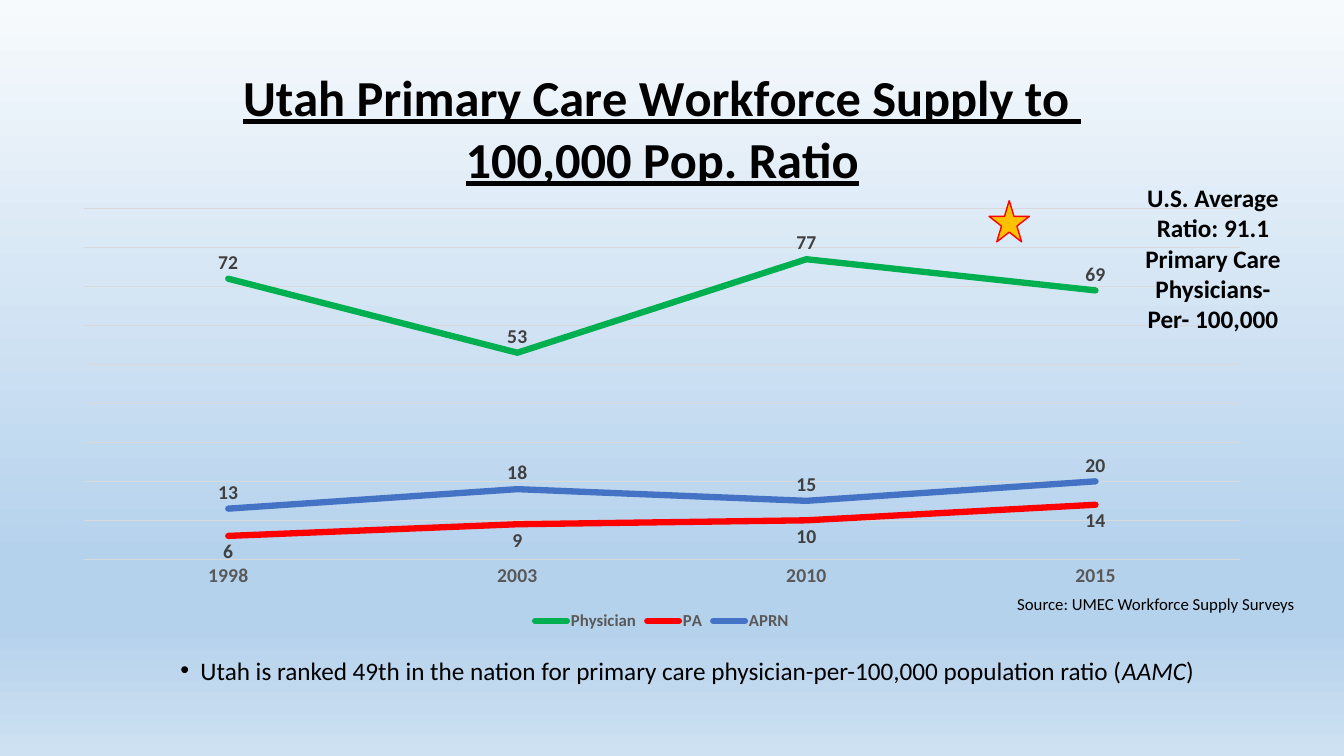
from pptx import Presentation
from pptx.chart.data import CategoryChartData
from pptx.dml.color import RGBColor
from pptx.enum.chart import (XL_CHART_TYPE, XL_LABEL_POSITION as LabelPos,
                             XL_LEGEND_POSITION as LegendPos, XL_MARKER_STYLE as Marker,
                             XL_TICK_MARK as Tick)
from pptx.enum.shapes import MSO_SHAPE
from pptx.enum.text import PP_ALIGN
from pptx.oxml import parse_xml
from pptx.oxml.ns import nsdecls, qn
from pptx.util import Inches, Pt

# Content
TITLE = ["Utah Primary Care Workforce Supply to ", "100,000 Pop. Ratio"]
YEARS = ["1998", "2003", "2010", "2015"]
SERIES = [  # name, values, theme colour, label position
    ("Physician", (72, 53, 77, 69), "physician", LabelPos.ABOVE),
    ("PA", (6, 9, 10, 14), "pa", LabelPos.BELOW),
    ("APRN", (13, 18, 15, 20), "aprn", LabelPos.ABOVE),
]
AVERAGE = [("U.S. Average Ratio: 91.1 Primary Care Physicians-Per- 100,000", False)]
RANKING = [
    ("Utah is ranked 49th in the nation for primary care physician-per-100,000 "
     "population ratio (", False),
    ("AAMC", True),
    (")", False),
]
SOURCE = [("Source: UMEC Workforce Supply Surveys", False)]

THEME = {
    "font": "Calibri",
    "colors": {"text": "000000", "label": "404040", "axis": "595959", "grid": "D9D9D9",
               "physician": "00B050", "pa": "FF0000", "aprn": "4472C4",
               "star": "FFC000", "star_line": "FF0000"},
    "sizes": {"title": 36, "body": 18, "label": 14, "small": 12},
    "background": [(0, "F7FAFD"), (74, "B5D2EC"), (83, "B5D2EC"), (100, "CEE1F2")],
}

# Places: left, top, width, height in inches
CHART_AT = (0.59, 0.46, 11.95, 5.84)
PLOT_AT = (0.83, 2.07, 11.47, 3.48)
TITLE_AT = (2.38, 0.63)
STAR_AT = (9.81, 1.99, 0.4, 0.41)
AVERAGE_AT = (11.19, 1.76, 1.68, 1.62)
RANKING_AT = (1.69, 6.45, 10.57, 0.4)
SOURCE_AT = (9.99, 5.84, 2.98, 0.3)


def color(name):
    return RGBColor.from_string(THEME["colors"][name])


def style(font, size, tint="text", bold=False):
    font.name = THEME["font"]
    font.size = Pt(THEME["sizes"][size])
    font.color.rgb = color(tint)
    font.bold = bold


def inches(place):
    return [Inches(length) for length in place]


def set_layout(parent, place, position, inner=False):
    """Fix a chart part at a slide place, as fractions of the chart."""
    left, top, width, height = CHART_AT
    fractions = [(place[0] - left) / width, (place[1] - top) / height]
    fractions += [length / full for length, full in zip(place[2:], (width, height))]
    parts = '<c:layoutTarget val="inner"/>' if inner else ""
    parts += '<c:xMode val="edge"/><c:yMode val="edge"/>'
    for name, value in zip("xywh", fractions):
        parts += f'<c:{name} val="{value:.4f}"/>'
    for old in parent.findall(qn("c:layout")):
        parent.remove(old)
    parent.insert(position, parse_xml(f'<c:layout {nsdecls("c")}><c:manualLayout>{parts}'
                                      '</c:manualLayout></c:layout>'))


def add_text(page, place, runs, size, bold=False, wrap=True):
    box = page.shapes.add_textbox(*inches(place))
    box.text_frame.word_wrap = wrap
    para = box.text_frame.paragraphs[0]
    for text, italic in runs:
        span = para.add_run()
        span.text = text
        style(span.font, size, bold=bold)
        span.font.italic = italic
    return para


def paint_background(page):
    fill = page.background.fill
    fill.gradient()
    fill.gradient_angle = 270
    stops = next(page.element.iter(qn("a:gsLst")))
    for stop in list(stops):
        stops.remove(stop)
    for percent, tint in THEME["background"]:
        stops.append(parse_xml(f'<a:gs {nsdecls("a")} pos="{percent * 1000}">'
                               f'<a:srgbClr val="{tint}"/></a:gs>'))


def add_title(chart):
    frame = chart.chart_title.text_frame
    for index, line in enumerate(TITLE):
        para = frame.add_paragraph() if index else frame.paragraphs[0]
        para.alignment = PP_ALIGN.CENTER
        span = para.add_run()
        span.text = line
        style(span.font, "title", bold=True)
        span.font.underline = True
    set_layout(next(chart.element.iter(qn("c:title"))), TITLE_AT, 1)


def add_ratio_chart(page):
    data = CategoryChartData(number_format="#,##0")
    data.categories = YEARS
    for name, values, _, _ in SERIES:
        data.add_series(name, values)
    chart = page.shapes.add_chart(XL_CHART_TYPE.LINE, *inches(CHART_AT), data).chart
    style(chart.font, "small")
    add_title(chart)

    # Axes and legend
    years, ratio = chart.category_axis, chart.value_axis
    years.major_tick_mark = Tick.NONE
    style(years.tick_labels.font, "label", "axis", bold=True)
    ratio.visible = False
    ratio.minimum_scale, ratio.maximum_scale, ratio.major_unit = 0, 90, 10
    for line in (years.format.line, ratio.major_gridlines.format.line):
        line.color.rgb = color("grid")
        line.width = Pt(0.75)
    chart.has_legend = True
    chart.legend.position = LegendPos.BOTTOM
    chart.legend.include_in_layout = False
    style(chart.legend.font, "small", "axis", bold=True)

    # Lines and their labels
    plot = chart.plots[0]
    plot.vary_by_categories = False
    for series, (_, _, tint, position) in zip(plot.series, SERIES):
        series.smooth = False
        series.marker.style = Marker.NONE
        series.format.line.color.rgb = color(tint)
        series.format.line.width = Pt(4.5)
        labels = series.data_labels
        labels.show_value = True
        labels.position = position
        labels.number_format = "#,##0"
        labels.number_format_is_linked = False
        style(labels.font, "label", "label", bold=True)
    for outline in chart.element.iter(qn("a:ln")):
        if outline.get("w") == str(Pt(4.5)):
            outline.set("cap", "rnd")
    set_layout(next(chart.element.iter(qn("c:plotArea"))), PLOT_AT, 0, inner=True)


def add_star(page):
    star = page.shapes.add_shape(MSO_SHAPE.STAR_5_POINT, *inches(STAR_AT))
    star.shadow.inherit = False
    star.fill.solid()
    star.fill.fore_color.rgb = color("star")
    star.line.color.rgb = color("star_line")
    star.line.width = Pt(1)


def main():
    deck = Presentation()
    deck.slide_width, deck.slide_height = Inches(13.33), Inches(7.5)
    page = deck.slides.add_slide(deck.slide_layouts[6])
    paint_background(page)
    add_ratio_chart(page)
    add_star(page)

    # Notes around the chart
    add_text(page, AVERAGE_AT, AVERAGE, "body", bold=True).alignment = PP_ALIGN.CENTER
    ranking = add_text(page, RANKING_AT, RANKING, "body")
    properties = ranking._p.get_or_add_pPr()
    properties.set("marL", str(Inches(0.2)))
    properties.set("indent", str(-Inches(0.2)))
    properties.append(parse_xml(f'<a:buFont {nsdecls("a")} typeface="Arial"/>'))
    properties.append(parse_xml(f'<a:buChar {nsdecls("a")} char="•"/>'))
    add_text(page, SOURCE_AT, SOURCE, "small", wrap=False)
    deck.save("out.pptx")


if __name__ == "__main__":
    main()
